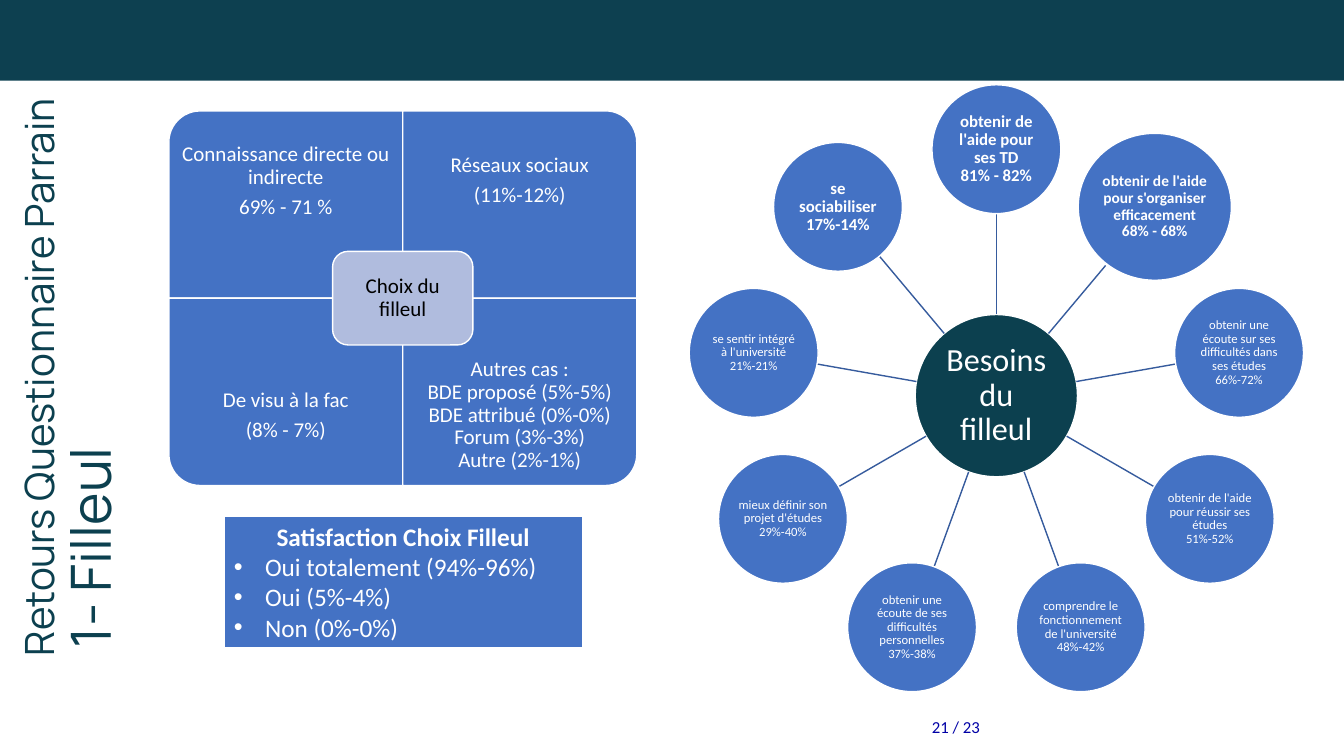
import math
from dataclasses import dataclass
from typing import Any

from lxml import etree
from pptx import Presentation
from pptx import util as u
from pptx.dml.color import RGBColor
from pptx.enum import shapes, text
from pptx.oxml import ns

# Grid of 160 columns by 90 rows with square cells
SLIDE_WIDTH, SLIDE_HEIGHT = u.Inches(13.33), u.Inches(7.5)
COLUMN, ROW = SLIDE_WIDTH / 160, SLIDE_HEIGHT / 90

TEAL = RGBColor(0x0D, 0x40, 0x50)
DEEP_TEAL = RGBColor(0x0C, 0x40, 0x4F)
BLUE = RGBColor(0x44, 0x72, 0xC4)
SPOKE_BLUE = RGBColor(0x36, 0x5B, 0x9D)
LILAC = RGBColor(0xB0, 0xBC, 0xDE)
PAGE_BLUE = RGBColor(0x00, 0x00, 0xA6)
WHITE = RGBColor(0xFF, 0xFF, 0xFF)
BLACK = RGBColor(0x00, 0x00, 0x00)

CENTER, RIGHT = text.PP_ALIGN.CENTER, text.PP_ALIGN.RIGHT
TITLE_SIZE = 28.8


@dataclass(frozen=True)
class Area:
    left: float
    top: float
    width: float
    height: float

    def place(self) -> dict[str, int]:
        return {"left": round(self.left * COLUMN), "top": round(self.top * ROW),
                "width": round(self.width * COLUMN), "height": round(self.height * ROW)}


@dataclass(frozen=True)
class Style:
    size: float
    color: RGBColor = WHITE
    bold: bool = False
    inset: float = 0.01
    align: Any = CENTER
    spacing: float = 0.9


@dataclass(frozen=True)
class Quadrant:
    column: int
    row: int
    turn: int
    lines: list[str]


@dataclass(frozen=True)
class Need:
    label: str
    style: Style = Style(9)
    width: float = 15.34
    height: float = 15.34


def centered(x: float, y: float, width: float, height: float) -> Area:
    return Area(x - width / 2, y - height / 2, width, height)


def assign(target: Any, formats: dict[str, Any]) -> None:
    for name, value in formats.items():
        setattr(target, name, value)


def set_font(font: Any, size: float, color: RGBColor, bold: bool = False,
             name: str = "Calibri") -> None:
    assign(font, {"name": name, "size": u.Pt(size), "bold": bold})
    font.color.rgb = color


def write(box: Any, lines: list[str], style: Style) -> None:
    margin = u.Inches(style.inset)
    frame = box.text_frame
    assign(frame, {"word_wrap": True, "vertical_anchor": text.MSO_ANCHOR.MIDDLE,
                   "margin_left": margin, "margin_right": margin,
                   "margin_top": margin, "margin_bottom": margin})
    frame.text = "\n".join(lines)
    for index, para in enumerate(frame.paragraphs):
        assign(para, {"alignment": style.align, "line_spacing": style.spacing})
        if index:
            para.space_before = u.Pt(0.35 * style.size)
        for span in para.runs:
            set_font(span.font, style.size, style.color, style.bold)


def paint(box: Any, fill: RGBColor, line_width: float = 1) -> None:
    box.fill.solid()
    box.fill.fore_color.rgb = fill
    if line_width:
        box.line.color.rgb = WHITE
        box.line.width = u.Pt(line_width)
    else:
        box.line.fill.background()


def add_shape(page: Any, kind: Any, area: Area, fill: RGBColor, line_width: float = 1) -> Any:
    box = page.shapes.add_shape(kind, **area.place())
    box.shadow.inherit = False
    paint(box, fill, line_width)
    return box


def add_text(page: Any, area: Area, lines: list[str], style: Style) -> None:
    write(page.shapes.add_textbox(**area.place()), lines, style)


def draw_title(page: Any) -> None:
    title = page.shapes.title
    assign(title, Area(-26.4, 36, 69.72, 16.92).place() | {"rotation": 270})
    paint(title, WHITE, 0)
    assign(title.text_frame, {"word_wrap": True, "auto_size": text.MSO_AUTO_SIZE.NONE,
                              "vertical_anchor": text.MSO_ANCHOR.MIDDLE})
    para = title.text_frame.paragraphs[0]
    assign(para, {"alignment": text.PP_ALIGN.LEFT, "line_spacing": 0.9})
    for words, size in (("Retours Questionnaire Parrain\v ", TITLE_SIZE), ("1- Filleul", 39.6)):
        for index, part in enumerate(words.split("\v")):
            if index:
                para.add_line_break()
                line_break = para._p.findall(ns.qn("a:br"))[-1]
                etree.SubElement(line_break, ns.qn("a:rPr"), sz=str(round(size * 100)))
            span = para.add_run()
            span.text = part
            set_font(span.font, size, DEEP_TEAL, name="Manrope")


def draw_satisfaction(page: Any) -> None:
    body = page.placeholders[1]
    assign(body, Area(26.64, 61.44, 42.72, 15.72).place())
    paint(body, BLUE, 1.5)
    frame = body.text_frame
    assign(frame, {"word_wrap": True, "auto_size": text.MSO_AUTO_SIZE.NONE,
                   "vertical_anchor": text.MSO_ANCHOR.TOP})
    frame.text = "\n".join(["Satisfaction Choix Filleul", "Oui totalement (94%-96%)",
                            "Oui (5%-4%)", "Non (0%-0%)"])
    for index, para in enumerate(frame.paragraphs):
        indent = u.Inches(0.31) if index else 0
        props = para._p.get_or_add_pPr()
        props.set("marL", str(indent))
        props.set("indent", str(-indent))
        if index:
            etree.SubElement(props, ns.qn("a:buFont"), typeface="Arial")
            etree.SubElement(props, ns.qn("a:buChar"), char="•")
        else:
            etree.SubElement(props, ns.qn("a:buNone"))
        assign(para, {"alignment": text.PP_ALIGN.LEFT if index else CENTER,
                      "space_before": u.Pt(0), "line_spacing": 1.0})
        for span in para.runs:
            set_font(span.font, 18, WHITE, bold=not index)


def draw_choices(page: Any, quadrants: list[Quadrant]) -> None:
    left, top, width, height = 20.1, 13.2, 27.85, 22.3
    for quadrant in quadrants:
        x, y = left + quadrant.column * width, top + quadrant.row * height
        size = (height, width) if quadrant.turn % 180 else (width, height)
        area = centered(x + width / 2, y + height / 2, *size)
        panel = add_shape(page, shapes.MSO_SHAPE.ROUND_1_RECTANGLE, area, BLUE)
        panel.rotation = quadrant.turn
        # The text keeps to the outer three quarters of its panel
        label = Area(x, y + quadrant.row * height / 4, width, height * 0.75)
        add_text(page, label, quadrant.lines, Style(15, inset=0.12))
    middle = centered(left + width, top + height, width * 0.6, height / 2)
    hub = add_shape(page, shapes.MSO_SHAPE.ROUNDED_RECTANGLE, middle, LILAC)
    write(hub, ["Choix du filleul"], Style(15, BLACK, inset=0.06))


def draw_needs(page: Any, needs: list[Need]) -> None:
    x, y, radius, hub_size = 118.62, 47.1, 29.34, 19.32
    hub = add_shape(page, shapes.MSO_SHAPE.OVAL, centered(x, y, hub_size, hub_size), DEEP_TEAL)
    write(hub, ["Besoins du filleul"], Style(23, inset=0.02))
    for index, need in enumerate(needs):
        angle = math.tau * index / len(needs)
        across, down = math.sin(angle), -math.cos(angle)
        ends = [round(value) for reach in (hub_size / 2, radius - need.width / 2)
                for value in ((x + reach * across) * COLUMN, (y + reach * down) * ROW)]
        spoke = page.shapes.add_connector(shapes.MSO_CONNECTOR.STRAIGHT, *ends)
        spoke.line.color.rgb = SPOKE_BLUE
        spoke.line.width = u.Pt(1)
        etree.SubElement(spoke._element.spPr, ns.qn("a:effectLst"))
        area = centered(x + radius * across, y + radius * down, need.width, need.height)
        write(add_shape(page, shapes.MSO_SHAPE.OVAL, area, BLUE), [need.label], need.style)


QUADRANTS = [
    Quadrant(0, 0, 270, ["Connaissance directe ou indirecte", "69% - 71 %"]),
    Quadrant(1, 0, 0, ["Réseaux sociaux", "(11%-12%)"]),
    Quadrant(0, 1, 180, ["De visu à la fac", "(8% - 7%)"]),
    Quadrant(1, 1, 90, ["Autres cas :\vBDE proposé (5%-5%)\vBDE attribué (0%-0%)"
                        "\vForum (3%-3%)\vAutre (2%-1%)"]),
]
# Clockwise from the top
NEEDS = [
    Need("obtenir de l'aide pour ses TD\v81% - 82%", Style(12, bold=True)),
    Need("obtenir de l'aide pour s'organiser efficacement 68% - 68%",
         Style(11, bold=True), 18.24, 17.5),
    Need("obtenir une écoute sur ses difficultés dans ses études\v66%-72%"),
    Need("obtenir de l'aide pour réussir ses études\v51%-52%"),
    Need("comprendre le fonctionnement de l'université 48%-42%"),
    Need("obtenir une écoute de ses difficultés personnelles 37%-38%"),
    Need("mieux définir son projet d'études\v29%-40%"),
    Need("se sentir intégré à l'université 21%-21%"),
    Need("se sociabiliser 17%-14%", Style(12, bold=True)),
]


def main() -> None:
    deck = Presentation()
    assign(deck, {"slide_width": SLIDE_WIDTH, "slide_height": SLIDE_HEIGHT})
    page = deck.slides.add_slide(deck.slide_layouts[1])
    add_shape(page, shapes.MSO_SHAPE.RECTANGLE, Area(0, 0, 160, 9.6), TEAL, 0)
    draw_title(page)
    draw_choices(page, QUADRANTS)
    draw_satisfaction(page)
    draw_needs(page, NEEDS)
    add_text(page, Area(81.84, 84.12, 36, 4.8), ["21 / 23"],
             Style(12, PAGE_BLUE, inset=0.1, align=RIGHT, spacing=1.0))
    deck.save("out.pptx")


if __name__ == "__main__":
    main()
